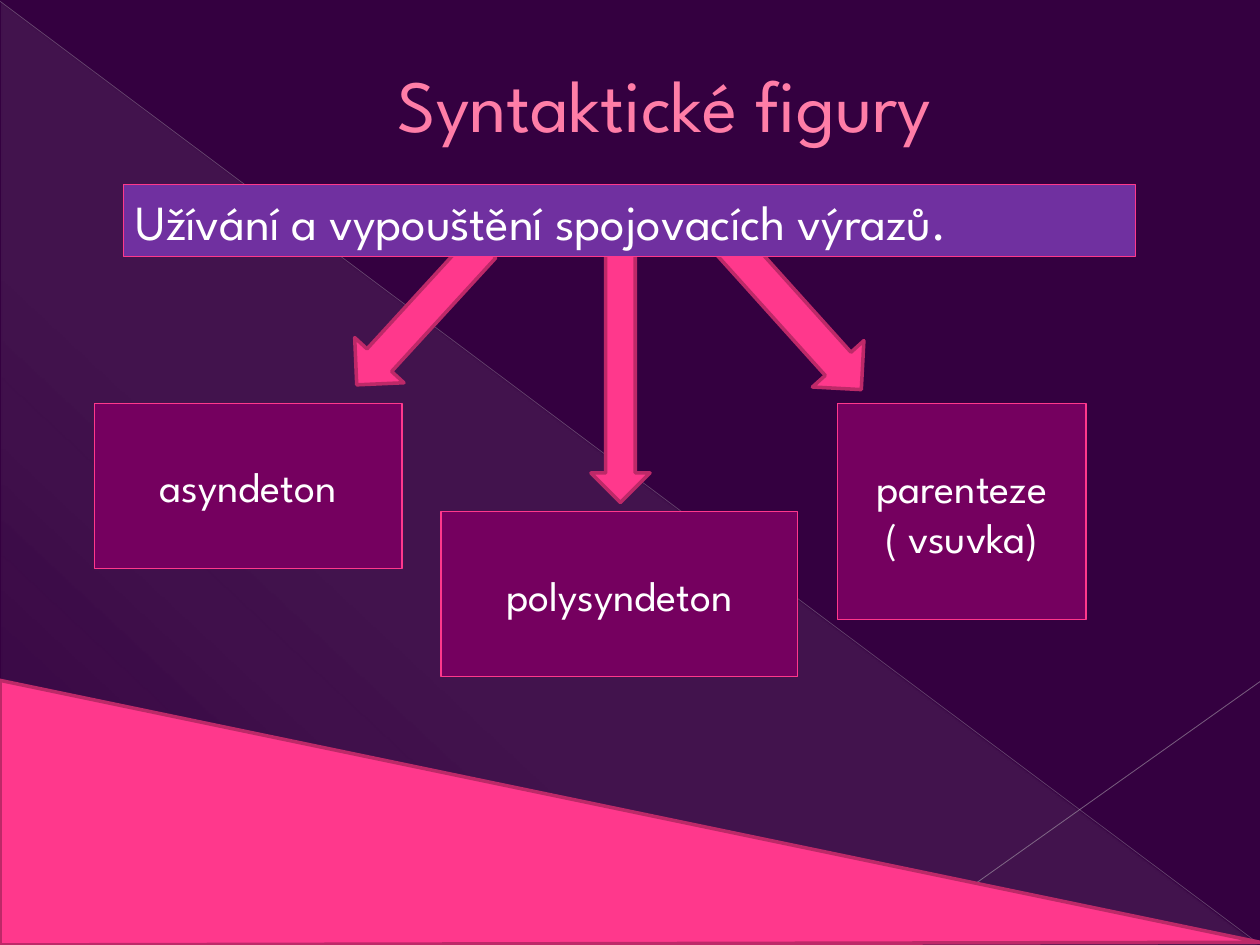
from lxml.etree import SubElement
from pptx import Presentation
from pptx.dml.color import RGBColor
from pptx.enum.shapes import MSO_CONNECTOR, MSO_SHAPE
from pptx.enum.text import MSO_ANCHOR, MSO_AUTO_SIZE, PP_ALIGN
from pptx.oxml import parse_xml
from pptx.oxml.ns import nsdecls, qn
from pptx.util import Pt

NIGHT = RGBColor(0x34, 0x00, 0x40)
PINK = RGBColor(0xFF, 0x38, 0x8C)
DARK_PINK = RGBColor(0xBD, 0x29, 0x68)
TITLE_PINK = RGBColor(0xFF, 0x7D, 0xA7)
TITLE_EDGE = RGBColor(0xB1, 0x27, 0x61)
PLUM = RGBColor(0x75, 0x00, 0x5F)
PURPLE = RGBColor(0x70, 0x30, 0xA0)
WHITE = RGBColor(0xFF, 0xFF, 0xFF)
VEIL = RGBColor(0xD2, 0xD2, 0xD2)
SILVER = RGBColor(0xBF, 0xBF, 0xBF)
PALE_SILVER = RGBColor(0xC6, 0xC6, 0xC6)


class SlideBuilder:
    font_name = "League Spartan"

    def __init__(self, page):
        self.page = page
        page.background.fill.solid()
        page.background.fill.fore_color.rgb = NIGHT

    def shape(self, kind, bounds, fill, line, width, rotation=0):
        shape = self.page.shapes.add_shape(kind, *map(Pt, bounds))
        shape.shadow.inherit = False
        shape.rotation = rotation
        shape.fill.solid()
        shape.fill.fore_color.rgb = fill
        shape.line.color.rgb = line
        shape.line.width = Pt(width)
        return shape

    def veil(self, bounds, stops, angle):
        shape = self.page.shapes.add_shape(MSO_SHAPE.RIGHT_TRIANGLE, *map(Pt, bounds))
        shape.shadow.inherit = False
        shape.line.fill.background()
        stop_xml = "".join(
            f'<a:gs pos="{position * 1000}"><a:srgbClr val="{VEIL}">'
            f'<a:alpha val="{opacity * 1000}"/></a:srgbClr></a:gs>'
            for position, opacity in stops
        )
        gradient = parse_xml(
            f'<a:gradFill {nsdecls("a")} rotWithShape="1"><a:gsLst>{stop_xml}</a:gsLst>'
            f'<a:lin ang="{angle * 60000}" scaled="0"/></a:gradFill>'
        )
        shape._element.spPr.find(qn("a:prstGeom")).addnext(gradient)

    def line(self, ends, color, width, opacity):
        line = self.page.shapes.add_connector(MSO_CONNECTOR.STRAIGHT, *map(Pt, ends))
        line.line.color.rgb = color
        line.line.width = Pt(width)
        properties = line._element.spPr
        alpha = SubElement(next(properties.iter(qn("a:srgbClr"))), qn("a:alpha"))
        alpha.set("val", str(opacity * 1000))
        SubElement(properties, qn("a:effectLst"))

    def label(self, shape, text, size, color, alignment):
        frame = shape.text_frame
        frame.word_wrap = True
        frame.auto_size = MSO_AUTO_SIZE.NONE
        frame.vertical_anchor = MSO_ANCHOR.MIDDLE
        para = frame.paragraphs[0]
        para.text = text
        para.alignment = alignment
        para.font.name = self.font_name
        para.font.size = Pt(size)
        para.font.color.rgb = color
        return para

    def box(self, text, bounds, fill=PLUM, size=24, alignment=PP_ALIGN.CENTER):
        box = self.shape(MSO_SHAPE.RECTANGLE, bounds, fill, PINK, 0.75)
        self.label(box, text, size, WHITE, alignment)

    def arrow(self, bounds, rotation):
        self.shape(MSO_SHAPE.DOWN_ARROW, bounds, PINK, DARK_PINK, 2, rotation)

    def wedge(self, bounds):
        wedge = self.shape(MSO_SHAPE.ISOSCELES_TRIANGLE, bounds, PINK, DARK_PINK, 2, 90)
        wedge.adjustments[0] = 0.99

    def title(self, text, bounds):
        title = self.page.shapes.title
        title.left, title.top, title.width, title.height = map(Pt, bounds)
        para = self.label(title, text, 42, TITLE_PINK, PP_ALIGN.CENTER)
        para._p.get_or_add_pPr().set("marL", str(Pt(38.2)))
        outline = parse_xml(
            f'<a:ln {nsdecls("a")} w="{Pt(0.5)}"><a:solidFill>'
            f'<a:srgbClr val="{TITLE_EDGE}"/></a:solidFill></a:ln>'
        )
        para.runs[0]._r.get_or_add_rPr().insert(0, outline)
        self.page.shapes._spTree.append(title._element)


def main():
    deck = Presentation()
    deck.slide_width, deck.slide_height = Pt(720), Pt(540)
    builder = SlideBuilder(deck.slides.add_slide(deck.slide_layouts[5]))

    builder.veil((0.72, 1.44, 718.56, 538.56), ((0, 10), (70, 8), (100, 1)), 133)
    builder.line((0, 0.72, 719.28, 539.28), SILVER, 0.39, 35)
    builder.line((720, 389.5, 509, 539.28), PALE_SILVER, 0.47, 45)

    builder.box("asyndeton", (54, 230.4, 175.7, 94.3))
    builder.box("polysyndeton", (252, 292.4, 203.8, 94.3))
    for bounds, rotation in (
        ((221, 126.7, 38.2, 107.3), 42.5),
        ((337.7, 145.4, 33.8, 141.8), 0),
        ((433.4, 121, 39.6, 116.6), 318),
    ):
        builder.arrow(bounds, rotation)
    builder.box("parenteze\v( vsuvka)", (478.8, 230.4, 141.8, 123.8))

    builder.wedge((284.4, 104.4, 151.2, 720))
    builder.title("Syntaktické figury", (36.7, 3.6, 648, 110.2))
    builder.box(
        "Užívání a vypouštění spojovacích výrazů.",
        (70.6, 105.5, 578.2, 41),
        PURPLE,
        28,
        PP_ALIGN.LEFT,
    )
    deck.save("out.pptx")


if __name__ == "__main__":
    main()
